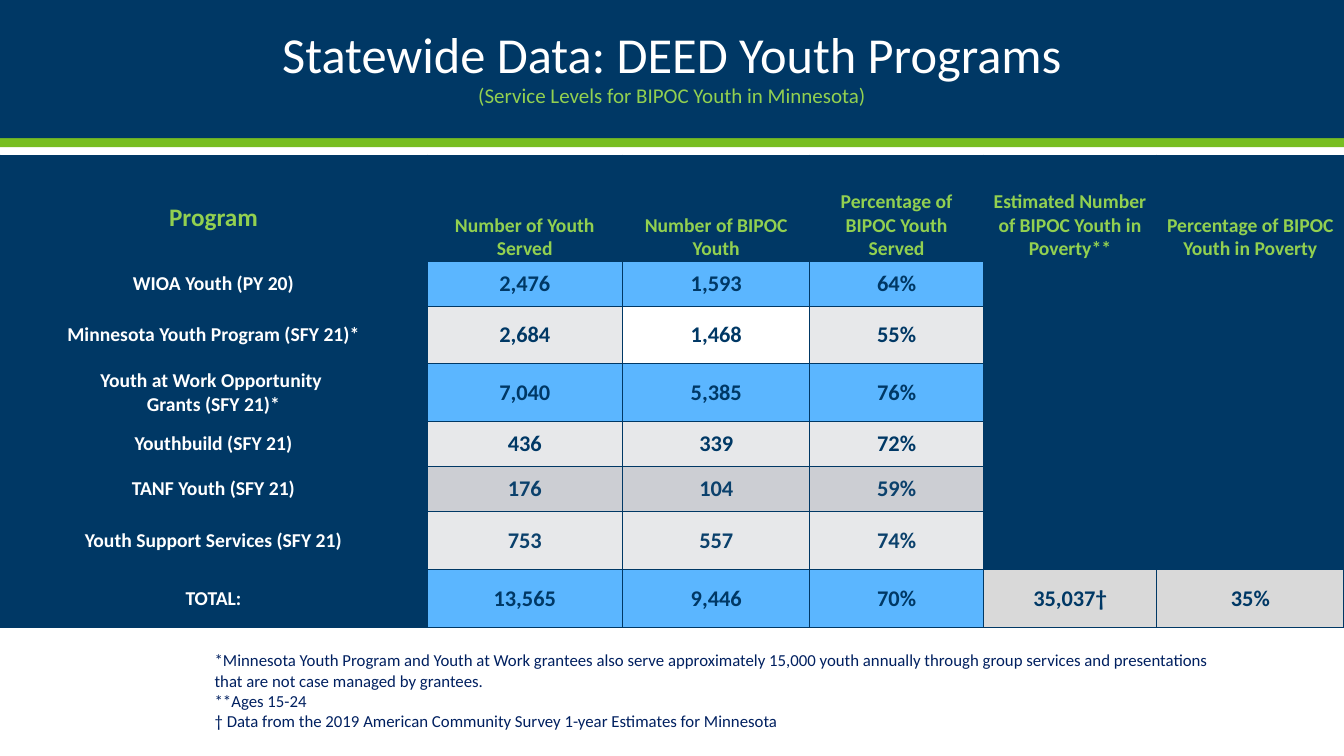
from dataclasses import dataclass

from lxml import etree
from pptx import Presentation
from pptx.dml.color import RGBColor
from pptx.enum.shapes import MSO_SHAPE
from pptx.enum.text import MSO_ANCHOR, PP_ALIGN
from pptx.oxml.ns import qn
from pptx.slide import Slide
from pptx.table import _Cell
from pptx.text.text import TextFrame
from pptx.util import Cm, Pt

RECTANGLE = MSO_SHAPE.RECTANGLE
MIDDLE, BOTTOM = MSO_ANCHOR.MIDDLE, MSO_ANCHOR.BOTTOM
LEFT, CENTER = PP_ALIGN.LEFT, PP_ALIGN.CENTER

NAVY, SOFT_NAVY, NOTE_BLUE = "003865", "0B416C", "002060"
GREEN, LIME, WHITE = "78BE21", "92D050", "FFFFFF"
BLUE, PALE, GRAY, SILVER = "5BB6FF", "E7E8EA", "CCCED3", "D9D9D9"

SLIDE_WIDTH, SLIDE_HEIGHT = 33.87, 19.05
COLUMN_WIDTHS = (10.76, 4.93, 4.72, 4.37, 4.37, 4.72)
HEADER_HEIGHT = 2.67
HEADERS = (
    "Program",
    "Number of Youth Served",
    "Number of BIPOC Youth",
    "Percentage of BIPOC Youth Served",
    "Estimated Number of BIPOC Youth in Poverty**",
    "Percentage of BIPOC Youth in Poverty",
)
FOOTNOTES = (
    "*Minnesota Youth Program and Youth at Work grantees also serve approximately 15,000 youth "
    "annually through group services and presentations that are not case managed by grantees.",
    "**Ages 15-24",
    "† Data from the 2019 American Community Survey 1-year Estimates for Minnesota",
)


@dataclass(frozen=True)
class ProgramRow:
    name: tuple[str, ...]
    values: tuple[str, ...]
    fills: tuple[str, ...]
    height: float
    color: str = NAVY


PROGRAMS = (
    ProgramRow(("WIOA Youth (PY 20)",), ("2,476", "1,593", "64%"), (BLUE,) * 3, 1.14),
    ProgramRow(("Minnesota Youth Program (SFY 21)*",), ("2,684", "1,468", "55%"),
               (PALE, WHITE, PALE), 1.45),
    ProgramRow(("Youth at Work Opportunity ", "Grants (SFY 21)*"), ("7,040", "5,385", "76%"),
               (BLUE,) * 3, 1.45),
    ProgramRow(("Youthbuild (SFY 21)",), ("436", "339", "72%"), (PALE,) * 3, 1.14),
    ProgramRow(("TANF Youth (SFY 21)",), ("176", "104", "59%"), (GRAY,) * 3, 1.14, SOFT_NAVY),
    ProgramRow(("Youth Support Services (SFY 21)",), ("753", "557", "74%"),
               (PALE,) * 3, 1.45, SOFT_NAVY),
    ProgramRow(("TOTAL:",), ("13,565", "9,446", "70%", "35,037†", "35%"),
               (BLUE,) * 3 + (SILVER,) * 2, 1.47),
)


def rgb(color: str) -> RGBColor:
    return RGBColor.from_string(color)


def add_text(frame: TextFrame, text: str, *, size: float, color: str, bold: bool = False,
             align: PP_ALIGN = CENTER, line_spacing: float = 1.0) -> None:
    """Write one paragraph, using the frame's first paragraph while it is empty."""
    first = frame.paragraphs[0]
    paragraph = frame.add_paragraph() if first.runs else first
    paragraph.alignment = align
    paragraph.line_spacing = line_spacing
    run = paragraph.add_run()
    run.text = text
    run.font.name = "Calibri"
    run.font.size = Pt(size)
    run.font.bold = bold
    run.font.color.rgb = rgb(color)


def add_band(slide: Slide, top: float, height: float, color: str) -> TextFrame:
    band = slide.shapes.add_shape(RECTANGLE, 0, Cm(top), Cm(SLIDE_WIDTH), Cm(height))
    band.shadow.inherit = False
    band.fill.solid()
    band.fill.fore_color.rgb = rgb(color)
    band.line.fill.background()
    return band.text_frame


def format_cell(cell: _Cell, fill: str, anchor: MSO_ANCHOR = MIDDLE) -> None:
    cell.margin_left = cell.margin_right = Cm(0.15)
    cell.margin_top = cell.margin_bottom = 0
    cell.vertical_anchor = anchor
    properties = cell._tc.get_or_add_tcPr()
    for side in ("a:lnL", "a:lnR", "a:lnT", "a:lnB"):
        border = etree.SubElement(properties, qn(side), w=str(Pt(1)))
        border_fill = etree.SubElement(border, qn("a:solidFill"))
        etree.SubElement(border_fill, qn("a:srgbClr"), val=NAVY)
    cell.fill.solid()
    cell.fill.fore_color.rgb = rgb(fill)


def add_title(slide: Slide) -> None:
    add_band(slide, 3.38, 0.33, GREEN)
    frame = add_band(slide, 0, 3.48, NAVY)
    frame.word_wrap = True
    frame.vertical_anchor = MIDDLE
    add_text(frame, "Statewide Data: DEED Youth Programs", size=36, color=WHITE, line_spacing=0.9)
    add_text(frame, "(Service Levels for BIPOC Youth in Minnesota)", size=15, color=LIME,
             line_spacing=0.9)


def add_program_table(slide: Slide) -> None:
    heights = [HEADER_HEIGHT] + [program.height for program in PROGRAMS]
    table = slide.shapes.add_table(len(heights), len(COLUMN_WIDTHS), 0, Cm(3.91),
                                   Cm(SLIDE_WIDTH), Cm(sum(heights))).table
    table.first_row = table.horz_banding = False
    for column, width in zip(table.columns, COLUMN_WIDTHS):
        column.width = Cm(width)
    for row, height in zip(table.rows, heights):
        row.height = Cm(height)

    # Header row, with "Program" set slightly below the middle
    for index, header in enumerate(HEADERS):
        cell = table.cell(0, index)
        format_cell(cell, NAVY, BOTTOM if index else MIDDLE)
        add_text(cell.text_frame, header, size=14 if index else 18, color=LIME, bold=True)
    table.cell(0, 0).margin_top = Cm(0.47)

    # Program rows; columns without a value stay navy
    for row_index, program in enumerate(PROGRAMS, start=1):
        fills = (NAVY,) + program.fills
        for index in range(len(COLUMN_WIDTHS)):
            format_cell(table.cell(row_index, index), fills[index] if index < len(fills) else NAVY)
        for line in program.name:
            add_text(table.cell(row_index, 0).text_frame, line, size=14, color=WHITE, bold=True)
        for index, value in enumerate(program.values, start=1):
            add_text(table.cell(row_index, index).text_frame, value, size=16,
                     color=program.color, bold=True)


def add_footnotes(slide: Slide) -> None:
    frame = slide.shapes.add_textbox(Cm(5.16), Cm(16.26), Cm(26.26), Cm(2.31)).text_frame
    frame.word_wrap = True
    for note in FOOTNOTES:
        add_text(frame, note, size=12, color=NOTE_BLUE, align=LEFT)


def main() -> None:
    presentation = Presentation()
    presentation.slide_width, presentation.slide_height = Cm(SLIDE_WIDTH), Cm(SLIDE_HEIGHT)
    slide = presentation.slides.add_slide(presentation.slide_layouts[6])
    add_title(slide)
    add_program_table(slide)
    add_footnotes(slide)
    presentation.save("out.pptx")


if __name__ == "__main__":
    main()
